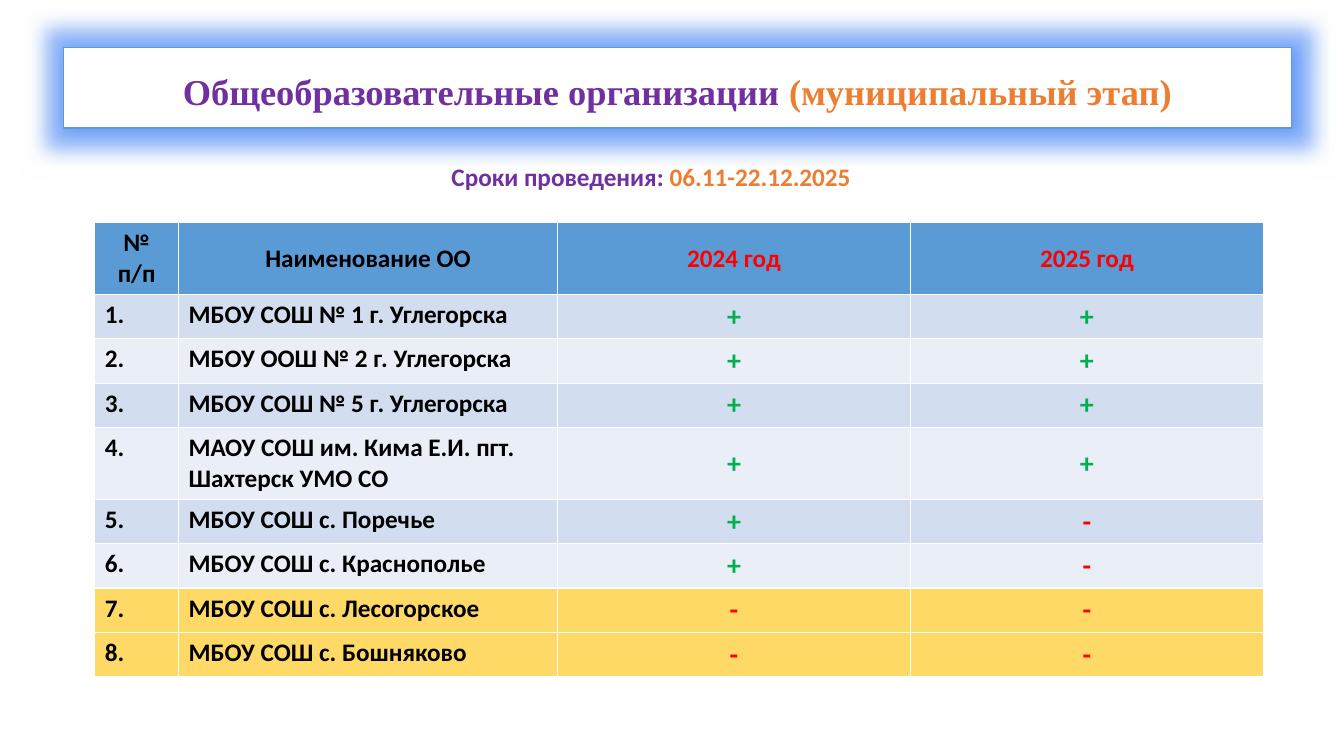
from lxml import etree
from pptx import Presentation
from pptx.dml.color import RGBColor
from pptx.enum import text
from pptx.oxml.ns import qn
from pptx.util import Inches, Pt

PURPLE = RGBColor(0x70, 0x30, 0xA0)
ORANGE = RGBColor(0xED, 0x7D, 0x31)
BLUE = RGBColor(0x5B, 0x9B, 0xD5)
GLOW_BLUE = RGBColor(0x3F, 0x80, 0xF6)
BAND_DARK = RGBColor(0xD2, 0xDE, 0xEF)
BAND_LIGHT = RGBColor(0xEA, 0xEF, 0xF7)
YELLOW = RGBColor(0xFF, 0xD9, 0x66)
RED = RGBColor(0xFF, 0x00, 0x00)
GREEN = RGBColor(0x00, 0xB0, 0x50)
BLACK = RGBColor(0x00, 0x00, 0x00)
WHITE = RGBColor(0xFF, 0xFF, 0xFF)

HEADERS = [("№ п/п", BLACK), ("Наименование ОО", BLACK), ("2024 год", RED), ("2025 год", RED)]
SCHOOLS = [
    ("МБОУ СОШ № 1 г. Углегорска", "+", "+"),
    ("МБОУ ООШ № 2 г. Углегорска", "+", "+"),
    ("МБОУ СОШ № 5 г. Углегорска", "+", "+"),
    ("МАОУ СОШ им. Кима Е.И. пгт. Шахтерск УМО СО", "+", "+"),
    ("МБОУ СОШ с. Поречье", "+", "-"),
    ("МБОУ СОШ с. Краснополье", "+", "-"),
    ("МБОУ СОШ с. Лесогорское", "-", "-"),
    ("МБОУ СОШ с. Бошняково", "-", "-"),
]
COLUMN_WIDTHS = [0.83, 3.76, 3.5, 3.5]
HEADER_HEIGHT, ROW_HEIGHT, TALL_ROW_HEIGHT = 0.69, 0.43, 0.7
TALL_ROW = 4


def format_font(font, size, name="Calibri"):
    font.size = Pt(size)
    font.name = name
    font.bold = True


def add_runs(paragraph, *runs):
    for content, color in runs:
        run = paragraph.add_run()
        run.text = content
        run.font.color.rgb = color


def add_effect(shape, tag, alpha, **attributes):
    """Append a translucent blue glow or shadow to the shape's effect list."""
    effects = shape.element.spPr.find(qn("a:effectLst"))
    effect = etree.SubElement(effects, qn(tag), {key: str(value) for key, value in attributes.items()})
    color = etree.SubElement(effect, qn("a:srgbClr"), val=str(GLOW_BLUE))
    etree.SubElement(color, qn("a:alpha"), val=str(alpha * 1000))


def format_title(title):
    title.left, title.top = Inches(0.63), Inches(0.47)
    title.width, title.height = Inches(12.18), Inches(0.8)
    title.fill.solid()
    title.fill.fore_color.rgb = WHITE
    title.line.color.rgb = BLUE
    title.line.width = Pt(1)
    title.shadow.inherit = False
    add_effect(title, "a:glow", 50, rad=Inches(0.36))
    add_effect(title, "a:outerShdw", 60, blurRad=Inches(0.15), dist=Inches(0.02), dir=2700000)
    frame = title.text_frame
    frame.auto_size = text.MSO_AUTO_SIZE.NONE
    frame.vertical_anchor = text.MSO_ANCHOR.MIDDLE
    frame.margin_top = Inches(0.12)
    paragraph = frame.paragraphs[0]
    paragraph.alignment = text.PP_ALIGN.CENTER
    format_font(paragraph.font, 26, "Times New Roman")
    add_runs(paragraph, ("Общеобразовательные организации ", PURPLE), ("(муниципальный этап)", ORANGE))


def add_dates(slide):
    box = slide.shapes.add_textbox(Inches(4.38), Inches(1.55), Inches(4.67), Inches(0.4))
    box.text_frame.word_wrap = True
    paragraph = box.text_frame.paragraphs[0]
    format_font(paragraph.font, 18)
    add_runs(paragraph, ("Сроки проведения: ", PURPLE), ("06.11-22.12.2025", ORANGE))


def fill_cell(cell, content, fill, color=BLACK, size=18, centered=False, middle=False):
    cell.fill.solid()
    cell.fill.fore_color.rgb = fill
    if middle:
        cell.vertical_anchor = text.MSO_ANCHOR.MIDDLE
    paragraph = cell.text_frame.paragraphs[0]
    paragraph.alignment = text.PP_ALIGN.CENTER if centered else text.PP_ALIGN.LEFT
    format_font(paragraph.font, size)
    add_runs(paragraph, (content, color))


def row_fill(number, marks):
    if "+" not in marks:
        return YELLOW
    return BAND_DARK if number % 2 else BAND_LIGHT


def add_school_table(slide):
    table = slide.shapes.add_table(
        len(SCHOOLS) + 1, len(HEADERS), Inches(0.94), Inches(2.21),
        Inches(sum(COLUMN_WIDTHS)), Inches(4.43)).table
    for column, width in zip(table.columns, COLUMN_WIDTHS):
        column.width = Inches(width)
    table.rows[0].height = Inches(HEADER_HEIGHT)
    for index, (header, color) in enumerate(HEADERS):
        fill_cell(table.cell(0, index), header, BLUE, color, centered=True, middle=index > 0)
    for number, (name, *marks) in enumerate(SCHOOLS, start=1):
        table.rows[number].height = Inches(TALL_ROW_HEIGHT if number == TALL_ROW else ROW_HEIGHT)
        fill = row_fill(number, marks)
        fill_cell(table.cell(number, 0), f"{number}.", fill)
        fill_cell(table.cell(number, 1), name, fill)
        for column, mark in enumerate(marks, start=2):
            color = GREEN if mark == "+" else RED
            fill_cell(table.cell(number, column), mark, fill, color, 20, centered=True, middle=True)


def main():
    presentation = Presentation()
    presentation.slide_width = Inches(13.33)
    presentation.slide_height = Inches(7.5)
    slide = presentation.slides.add_slide(presentation.slide_layouts.get_by_name("Title Only"))
    format_title(slide.shapes.title)
    add_school_table(slide)
    add_dates(slide)
    presentation.save("out.pptx")


if __name__ == "__main__":
    main()
